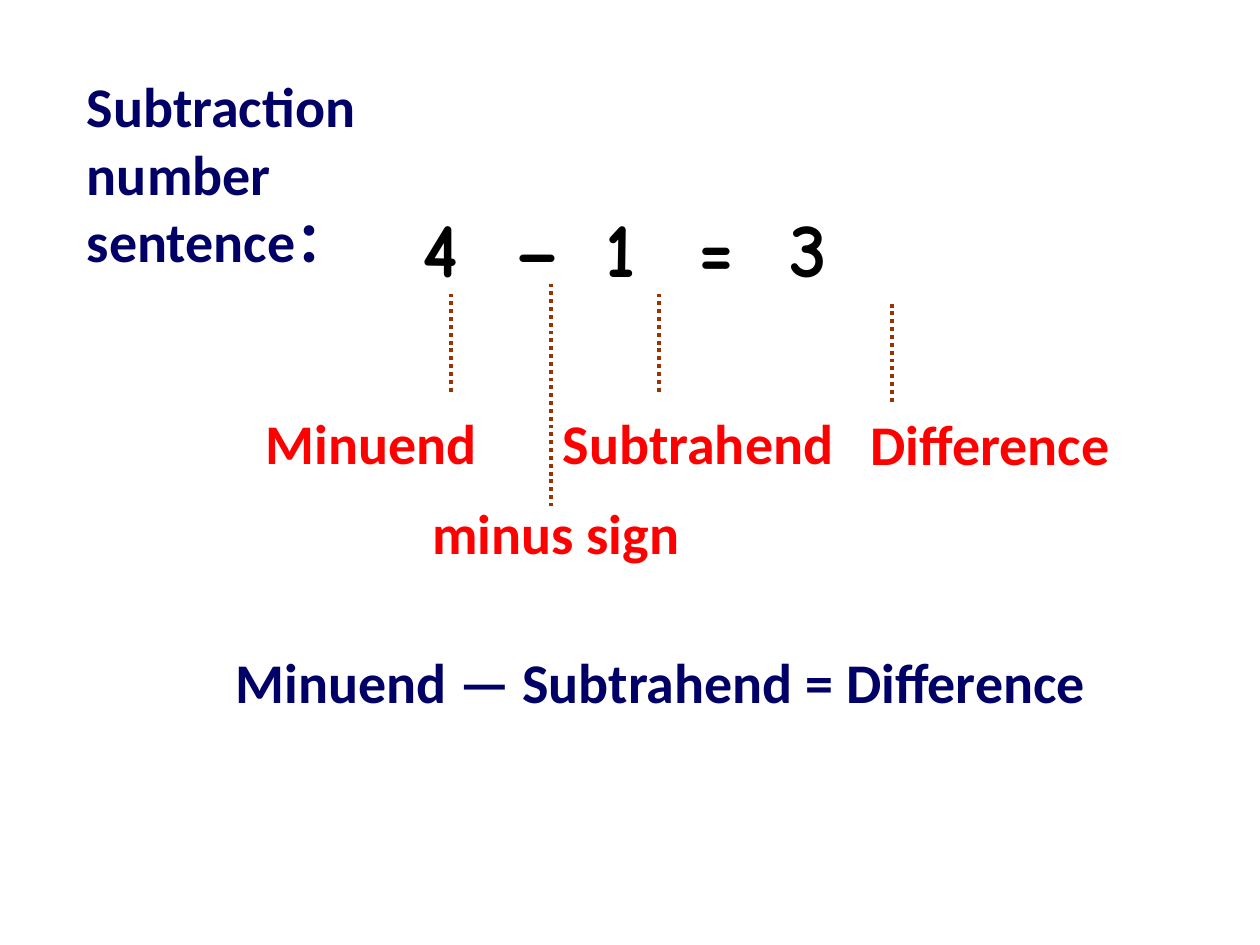
"""Build a slide that names the parts of a subtraction sentence."""
from lxml import etree
from pptx import Presentation
from pptx.dml.color import RGBColor
from pptx.enum.dml import MSO_LINE
from pptx.enum.shapes import MSO_CONNECTOR
from pptx.enum.text import MSO_ANCHOR, MSO_AUTO_SIZE, PP_ALIGN
from pptx.oxml.ns import qn
from pptx.util import Inches, Pt

STRAIGHT = MSO_CONNECTOR.STRAIGHT
DOTS = MSO_LINE.ROUND_DOT
TOP = MSO_ANCHOR.TOP
GROW = MSO_AUTO_SIZE.SHAPE_TO_FIT_TEXT
LEFT = PP_ALIGN.LEFT

THEME = {
    "navy": "000066", "red": "FF0000", "black": "000000", "brown": "993300",
    "font": "Calibri", "hand": "Comic Neue", "size": 32, "big": 44, "line": 2.25,
}
TITLE = ("Subtraction number sentence：", (0.59, 0.52, 3.86, 1.18))
SUM = ("4", "–", "1", "=", "3")
SUM_BOX = (2.01, 1.54, 5.83, 0.83)
PITCH = 0.73
RULE = ("Minuend — Subtrahend = Difference", (1.77, 5.09, 7.4, 0.64))
PARTS = [
    {"name": "Minuend", "box": (2.01, 3.19, 2.13, 0.64), "line": (3.58, 2.33, 3.12)},
    {"name": "Subtrahend", "box": (4.37, 3.19, 2.36, 1.18), "line": (5.23, 2.33, 3.12)},
    {"name": "Difference", "box": (6.81, 3.2, 2.36, 0.64), "line": (7.08, 2.41, 3.2)},
    {"name": "minus sign", "box": (3.03, 3.91, 2.68, 0.64), "line": (4.37, 2.25, 4.02),
     "inset": 0.4},
]


def put_text(shape, text, color="navy", size="size", font="font", inset=0.1):
    frame = shape.text_frame
    frame.word_wrap = True
    frame.auto_size = GROW
    frame.vertical_anchor = TOP
    frame.margin_left = Inches(inset)
    par = frame.paragraphs[0]
    par.alignment = LEFT
    run = par.add_run()
    run.text = text
    run.font.name = THEME[font]
    run.font.size = Pt(THEME[size])
    run.font.bold = True
    run.font.color.rgb = RGBColor.from_string(THEME[color])
    return par


def add_box(shapes, box, text, **look):
    return put_text(shapes.add_textbox(*map(Inches, box)), text, **look)


def add_line(shapes, x, top, end):
    line = shapes.add_connector(STRAIGHT, *map(Inches, (x, top, x, end)))
    line.line.color.rgb = RGBColor.from_string(THEME["brown"])
    line.line.width = Pt(THEME["line"])
    line.line.dash_style = DOTS
    etree.SubElement(line._element.spPr, qn("a:effectLst"))


def set_tabs(par, count, pitch):
    tabs = etree.SubElement(par._p.get_or_add_pPr(), qn("a:tabLst"))
    for i in range(1, count):
        etree.SubElement(tabs, qn("a:tab"), pos=str(Inches(i * pitch)), algn="l")


def main():
    deck = Presentation()
    deck.slide_width, deck.slide_height = Inches(10), Inches(7.5)
    slide = deck.slides.add_slide(deck.slide_layouts[5])
    shapes = slide.shapes

    text, box = TITLE
    title = shapes.title
    title.left, title.top, title.width, title.height = map(Inches, box)
    put_text(title, text)

    par = add_box(shapes, SUM_BOX, "\t".join(SUM), color="black",
                  size="big", font="hand", inset=1.34)
    set_tabs(par, len(SUM), PITCH)

    for part in PARTS:
        group = shapes.add_group_shape().shapes
        add_line(group, *part["line"])
        add_box(group, part["box"], part["name"], color="red",
                inset=part.get("inset", 0.1))

    text, box = RULE
    add_box(shapes, box, text)
    deck.save("out.pptx")


if __name__ == "__main__":
    main()
